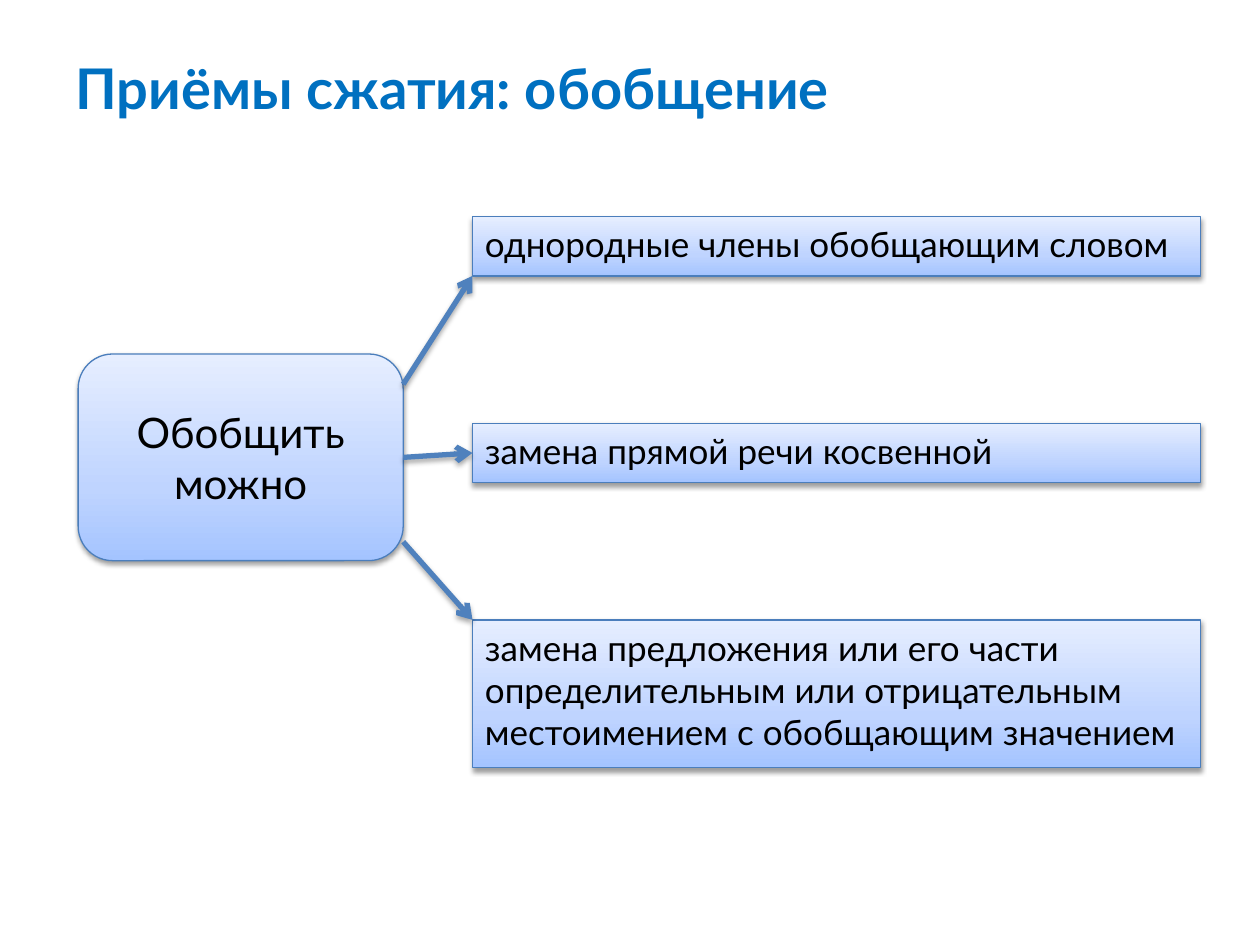
from copy import deepcopy

from lxml.etree import SubElement
from pptx import Presentation
from pptx.dml.color import RGBColor
from pptx.enum.shapes import MSO_CONNECTOR as CONN, MSO_SHAPE as SHAPE
from pptx.enum.text import MSO_ANCHOR as ANCHOR, PP_ALIGN as ALIGN
from pptx.oxml.ns import qn
from pptx.util import Inches, Pt


def rgb(value):
    return RGBColor.from_string(value)


class Diagram:
    """Draws styled boxes, arrows and titles on one slide."""

    FONT = "Lato"
    TITLE, TEXT, EDGE, ARROW = "0070C0", "000000", "4B7EBC", "4F81BD"
    GRADIENT = [(0, "A4C4FF"), (0.35, "BFD4FF"), (1, "E6EEFF")]

    def __init__(self, slide):
        self.slide = slide

    def set_text(self, sp, text, size, color, bold=False, align=ALIGN.LEFT, anchor=ANCHOR.MIDDLE):
        tf = sp.text_frame
        tf.word_wrap = True
        tf.vertical_anchor = anchor
        tf.text = text
        p = tf.paragraphs[0]
        p.alignment = align
        font = p.runs[0].font
        font.name, font.size, font.bold = self.FONT, Pt(size), bold
        font.color.rgb = rgb(color)

    def shadow(self, spPr, dist, opacity):
        effects = spPr.find(qn("a:effectLst"))
        if effects is None:
            effects = SubElement(spPr, qn("a:effectLst"))
        outer = SubElement(effects, qn("a:outerShdw"), blurRad=str(Pt(3.1)),
                           dist=str(Pt(dist)), dir="5400000", rotWithShape="0")
        color = SubElement(outer, qn("a:srgbClr"), val="000000")
        SubElement(color, qn("a:alpha"), val=str(opacity * 1000))

    def gradient(self, sp):
        sp.fill.gradient()
        sp.fill.gradient_angle = 90
        stops = sp._element.spPr.find(".//" + qn("a:gsLst"))
        stops.insert(1, deepcopy(stops[0]))
        for stop, (position, color) in zip(sp.fill.gradient_stops, self.GRADIENT):
            stop.position = position
            stop.color.rgb = rgb(color)

    def title(self, text, x, y, w, h):
        sp = self.slide.shapes.add_textbox(Inches(x), Inches(y), Inches(w), Inches(h))
        self.set_text(sp, text, 32, self.TITLE, bold=True)

    def box(self, text, x, y, w, h, kind=SHAPE.RECTANGLE, size=20, **layout):
        sp = self.slide.shapes.add_shape(kind, Inches(x), Inches(y), Inches(w), Inches(h))
        self.gradient(sp)
        sp.line.color.rgb = rgb(self.EDGE)
        sp.line.width = Pt(0.75)
        sp.shadow.inherit = False
        self.shadow(sp._element.spPr, 1.6, 38)
        self.set_text(sp, text, size, self.TEXT, **layout)
        return sp

    def arrow(self, x1, y1, x2, y2):
        line = self.slide.shapes.add_connector(
            CONN.STRAIGHT, Inches(x1), Inches(y1), Inches(x2), Inches(y2))
        line.line.color.rgb = rgb(self.ARROW)
        line.line.width = Pt(3)
        ln = line._element.spPr.find(qn("a:ln"))
        SubElement(ln, qn("a:tailEnd"), type="arrow")
        self.shadow(line._element.spPr, 1.8, 35)
        return line


def main():
    prs = Presentation()
    prs.slide_width, prs.slide_height = Inches(10), Inches(7.5)
    d = Diagram(prs.slides.add_slide(prs.slide_layouts[6]))

    d.title("Приёмы сжатия: обобщение", 0.5, 0.3, 9, 0.79)
    source = d.box("Обобщить можно", 0.62, 2.81, 2.58, 1.64,
                   SHAPE.ROUNDED_RECTANGLE, 24, align=ALIGN.CENTER)
    methods = [
        ("однородные члены обобщающим словом", 1.72, 0.47),
        ("замена прямой речи косвенной", 3.36, 0.47),
        ("замена предложения или его части определительным или отрицательным "
         "местоимением с обобщающим значением", 4.92, 1.17),
    ]
    targets = [d.box(text, 3.75, y, 5.78, h, anchor=ANCHOR.TOP) for text, y, h in methods]

    ends = [(3.05, 2.19), (3.63, 3.59), (4.3, 4.92)]
    arrows = [d.arrow(3.2, start, 3.75, end) for start, end in ends]
    arrows[1].begin_connect(source, 3)
    arrows[1].end_connect(targets[1], 1)

    prs.save("out.pptx")


if __name__ == "__main__":
    main()
